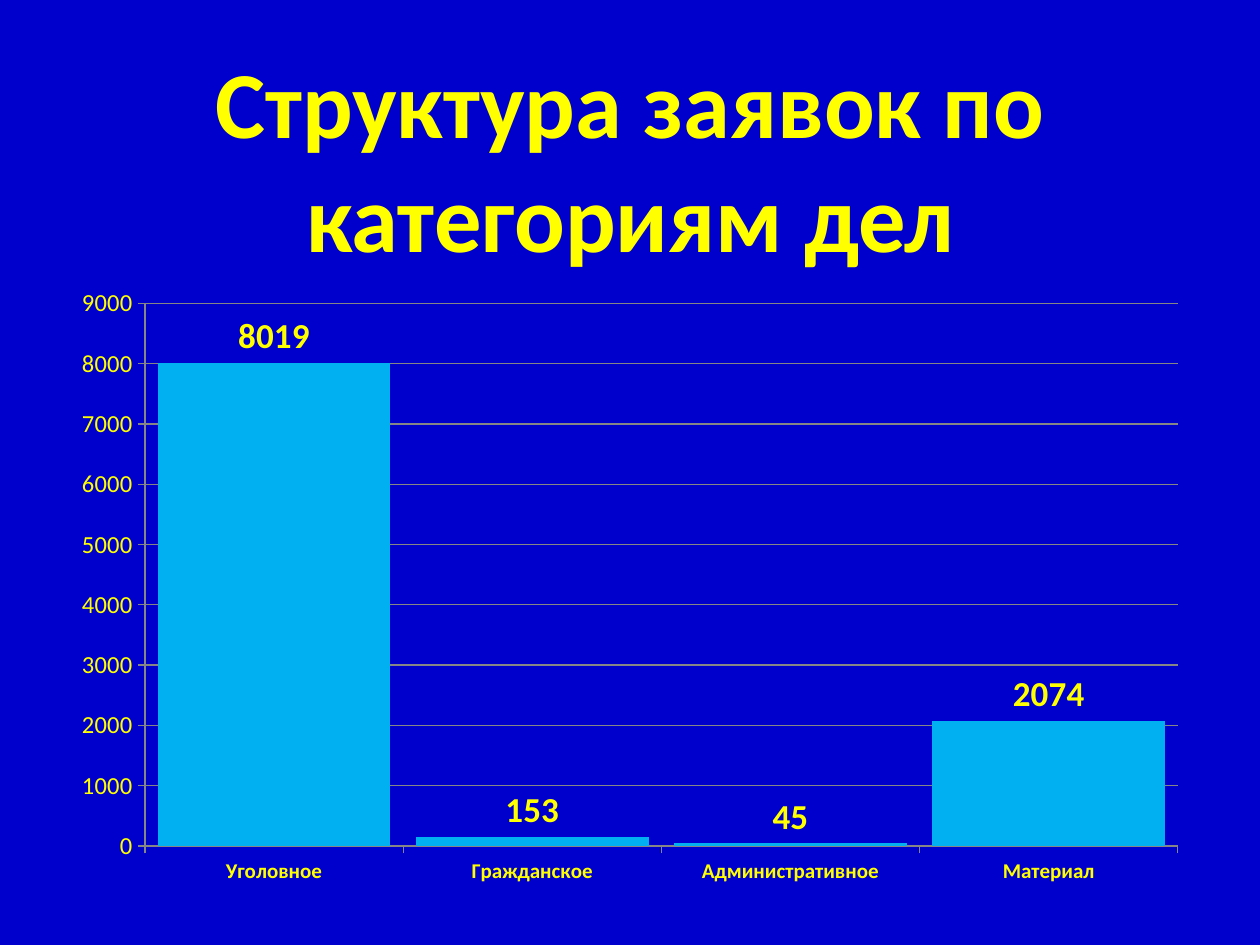
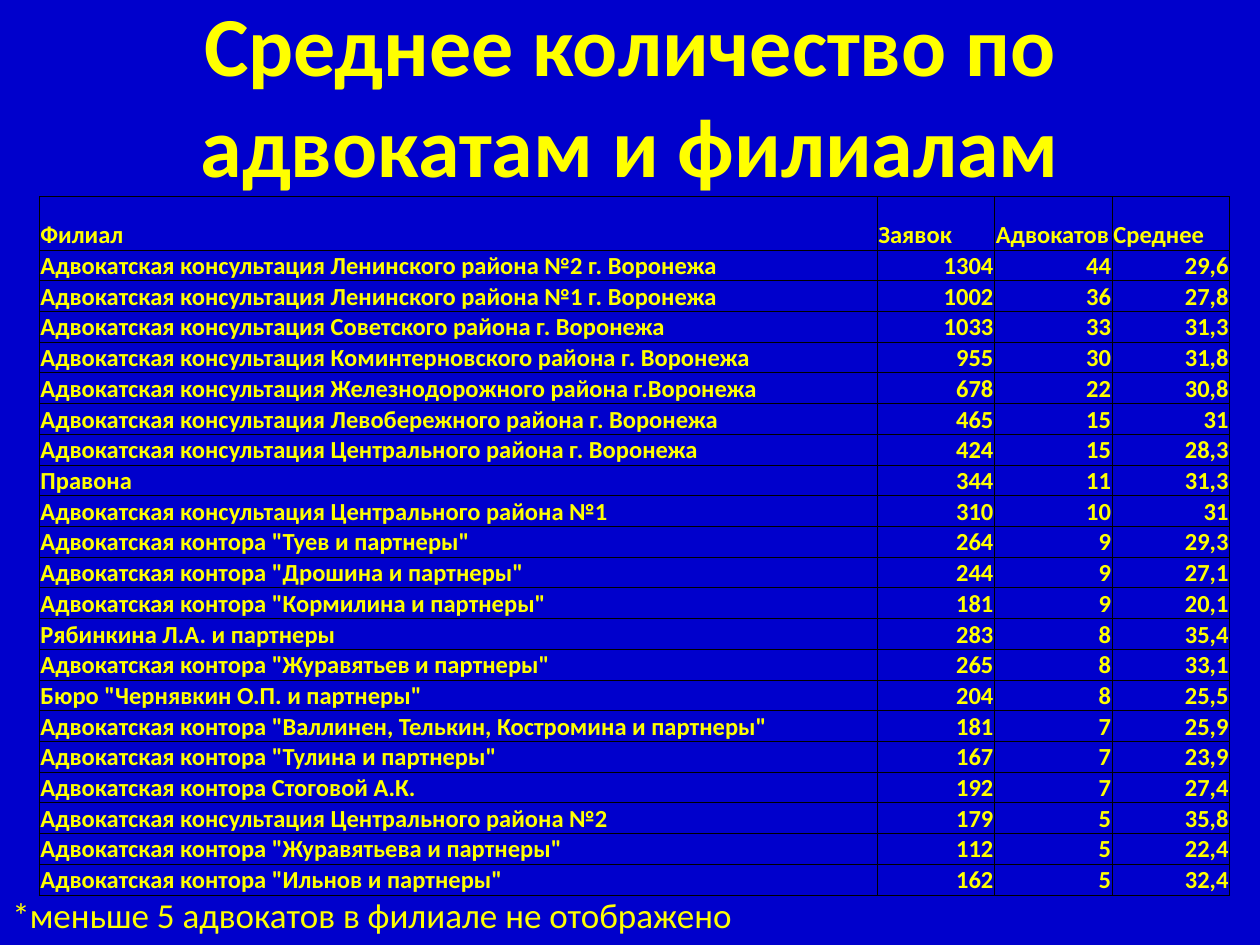
from lxml import etree
from pptx import Presentation
from pptx.chart.data import CategoryChartData
from pptx.dml.color import RGBColor
from pptx.enum.chart import XL_CHART_TYPE as CHART, XL_LABEL_POSITION as LABEL
from pptx.enum.chart import XL_TICK_MARK as TICK
from pptx.enum.text import MSO_ANCHOR as ANCHOR, PP_ALIGN as ALIGN
from pptx.oxml.ns import qn
from pptx.util import Pt

BLUE = RGBColor(0x00, 0x00, 0xCC)
YELLOW = RGBColor(0xFF, 0xFF, 0x00)
SKY = RGBColor(0x00, 0xB0, 0xF0)
GRAY = RGBColor(0x86, 0x86, 0x86)
BLACK = RGBColor(0x00, 0x00, 0x00)
FONT = "Calibri"

CASES = {"Уголовное": 8019, "Гражданское": 153, "Административное": 45, "Материал": 2074}

HEADER = ("Филиал", "Заявок", "Адвокатов", "Среднее")
BRANCHES = [
    ("Адвокатская консультация Ленинского района №2 г. Воронежа", "1304", "44", "29,6"),
    ("Адвокатская консультация Ленинского района №1 г. Воронежа", "1002", "36", "27,8"),
    ("Адвокатская консультация Советского района г. Воронежа", "1033", "33", "31,3"),
    ("Адвокатская консультация Коминтерновского района г. Воронежа", "955", "30", "31,8"),
    ("Адвокатская консультация Железнодорожного района г.Воронежа", "678", "22", "30,8"),
    ("Адвокатская консультация Левобережного района г. Воронежа", "465", "15", "31"),
    ("Адвокатская консультация Центрального района г. Воронежа", "424", "15", "28,3"),
    ("Правона", "344", "11", "31,3"),
    ("Адвокатская консультация Центрального района №1", "310", "10", "31"),
    ('Адвокатская контора "Туев и партнеры"', "264", "9", "29,3"),
    ('Адвокатская контора "Дрошина и партнеры"', "244", "9", "27,1"),
    ('Адвокатская контора "Кормилина и партнеры"', "181", "9", "20,1"),
    ("Рябинкина Л.А. и партнеры", "283", "8", "35,4"),
    ('Адвокатская контора "Журавятьев и партнеры"', "265", "8", "33,1"),
    ('Бюро "Чернявкин О.П. и партнеры"', "204", "8", "25,5"),
    ('Адвокатская контора "Валлинен, Телькин, Костромина и партнеры"', "181", "7", "25,9"),
    ('Адвокатская контора "Тулина и партнеры"', "167", "7", "23,9"),
    ("Адвокатская контора Стоговой А.К.", "192", "7", "27,4"),
    ("Адвокатская консультация Центрального района №2", "179", "5", "35,8"),
    ('Адвокатская контора "Журавятьева и партнеры"', "112", "5", "22,4"),
    ('Адвокатская контора "Ильнов и партнеры"', "162", "5", "32,4"),
]


def style_font(font, size, bold=False, color=YELLOW):
    font.name, font.size, font.bold = FONT, Pt(size), bold
    font.color.rgb = color


def write_text(tf, text, size=14, bold=False, align=ALIGN.LEFT):
    p = tf.paragraphs[0]
    p.alignment = align
    r = p.add_run()
    r.text = text
    style_font(r.font, size, bold)


def add_borders(cell, color=BLACK, width=0.5):
    tc_pr = cell._tc.get_or_add_tcPr()
    for i, side in enumerate(("lnL", "lnR", "lnT", "lnB")):
        ln = etree.Element(qn(f"a:{side}"), w=str(Pt(width)))
        fill = etree.SubElement(ln, qn("a:solidFill"))
        etree.SubElement(fill, qn("a:srgbClr"), val=str(color))
        tc_pr.insert(i, ln)


class Deck:
    def __init__(self):
        self.prs = Presentation()
        self.prs.slide_width, self.prs.slide_height = Pt(720), Pt(540)
        self.s = None

    def new_slide(self):
        self.s = self.prs.slides.add_slide(self.prs.slide_layouts[6])
        fill = self.s.background.fill
        fill.solid()
        fill.fore_color.rgb = BLUE

    def text(self, text, x, y, w, h, anchor=ANCHOR.TOP, **fmt):
        tf = self.s.shapes.add_textbox(Pt(x), Pt(y), Pt(w), Pt(h)).text_frame
        tf.word_wrap = True
        tf.vertical_anchor = anchor
        write_text(tf, text, **fmt)

    def title(self, text, y, h, size):
        self.text(text, 11.4, y, 697.4, h, ANCHOR.MIDDLE,
                  size=size, bold=True, align=ALIGN.CENTER)

    def column_chart(self, values, x, y, w, h):
        data = CategoryChartData()
        data.categories = list(values)
        data.add_series("Series 1", list(values.values()))
        chart = self.s.shapes.add_chart(
            CHART.COLUMN_CLUSTERED, Pt(x), Pt(y), Pt(w), Pt(h), data).chart
        chart.has_title = chart.has_legend = False
        style_font(chart.font, 10, color=BLACK)

        # Columns and their labels
        plot = chart.plots[0]
        plot.gap_width = 11
        plot.vary_by_categories = False
        fill = plot.series[0].format.fill
        fill.solid()
        fill.fore_color.rgb = SKY
        plot.has_data_labels = True
        labels = plot.data_labels
        labels.show_value = True
        labels.position = LABEL.OUTSIDE_END
        style_font(labels.font, 20, bold=True)

        # Axes and gridlines
        cat_axis, val_axis = chart.category_axis, chart.value_axis
        style_font(cat_axis.tick_labels.font, 12, bold=True)
        style_font(val_axis.tick_labels.font, 14)
        val_axis.minimum_scale, val_axis.maximum_scale = 0, 9000
        val_axis.major_unit = 1000
        val_axis.has_major_gridlines = True
        for axis in (cat_axis, val_axis):
            axis.major_tick_mark = TICK.OUTSIDE
        for part in (cat_axis, val_axis, val_axis.major_gridlines):
            part.format.line.color.rgb = GRAY
            part.format.line.width = Pt(0.75)

    def table(self, rows, x, y, col_widths, header_h, row_h):
        height = header_h + row_h * (len(rows) - 1)
        table = self.s.shapes.add_table(
            len(rows), len(col_widths), Pt(x), Pt(y), Pt(sum(col_widths)), Pt(height)).table
        table.first_row = table.horz_banding = False
        for col, width in zip(table.columns, col_widths):
            col.width = Pt(width)
        for i, row in enumerate(rows):
            table.rows[i].height = Pt(row_h if i else header_h)
            for j, text in enumerate(row):
                cell = table.cell(i, j)
                cell.fill.background()
                cell.vertical_anchor = ANCHOR.BOTTOM
                cell.margin_left = cell.margin_right = cell.margin_top = Pt(0.72)
                cell.margin_bottom = 0
                write_text(cell.text_frame, text, bold=True,
                           align=ALIGN.RIGHT if i and j else ALIGN.LEFT)
                add_borders(cell)


def main():
    deck = Deck()

    # Requests by category of case
    deck.new_slide()
    deck.title("Структура заявок по категориям дел", 22.3, 135.4, 54)
    deck.column_chart(CASES, 33.8, 157.7, 652.3, 354.2)

    # Averages by branch
    deck.new_slide()
    deck.title("Среднее количество по адвокатам и филиалам", 0, 106.6, 48)
    deck.text("*меньше 5 адвокатов в филиале не отображено", 0, 506.9, 504, 33.1, size=20)
    deck.table([HEADER, *BRANCHES], 22.4, 112.3, [478.8] + [67.2] * 3, 30.6, 16.8)

    deck.prs.save("out.pptx")


if __name__ == "__main__":
    main()
